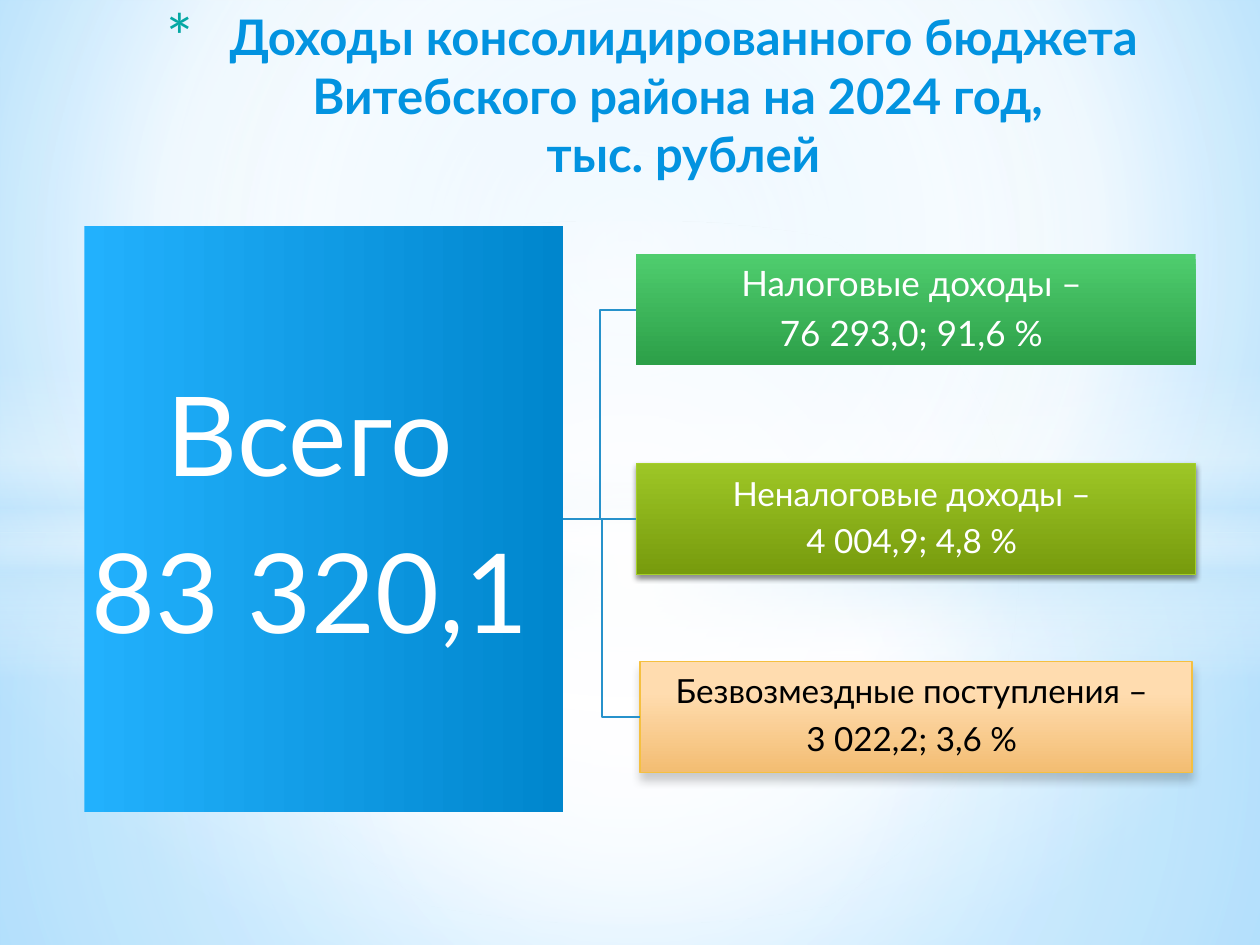
"""Build the slide on the consolidated budget revenue of the Vitebsk district."""
from dataclasses import dataclass

from lxml import etree
from pptx import Presentation
from pptx import util as u
from pptx.dml.color import RGBColor
from pptx.enum import shapes, text
from pptx.oxml import ns


@dataclass(frozen=True)
class Theme:
    font: str = "Lato"
    title: str = "0293E0"
    bullet: str = "04A8A4"
    light: str = "FFFFFF"
    dark: str = "000000"
    link: str = "2792CB"
    title_size: int = 28
    total_size: int = 63
    branch_size: int = 20
    small_size: int = 19


THEME = Theme()
WIDTH, HEIGHT = u.Inches(10), u.Inches(7.5)
TITLE = "Доходы консолидированного бюджета Витебского района на 2024 год, \vтыс. рублей"
TITLE_AREA = (5.1, 0, 91.3, 26.1)
CENTER = (50, 50, 50, 50)
BACKGROUND = dict(stops=[(0, "B0E0FF"), (60, "FFFFFF"), (100, "6BC5FF")], focus=(20, 10, 20, 60))
BACKDROP = [
    ("RECTANGLE", (0, 56.4, 100, 43.6),
     dict(stops=[(0, "FFFFFF", 91), (37, "FFFFFF", 76), (100, "C6E7FC", 79)], focus=CENTER)),
    ("RECTANGLE", (0, 0, 100, 56.4),
     dict(stops=[(0, "FFFFFF", 89), (48, "FFFFFF", 62), (100, "C6E7FC", 79)], focus=CENTER)),
    ("RECTANGLE", (0, 38.67, 100, 33.33),
     dict(stops=[(0, "FFFFFF", 0), (29, "FFFFFF", 30), (45, "C6E7FC", 40),
                 (55, "FFFFFF", 26), (65, "C6E7FC", 60), (100, "FFFFFF", 0)])),
    ("OVAL", (0, 23.33, 100, 74.4),
     dict(stops=[(0, "FFFFFF"), (54, "FFFFFF", 0)], focus=CENTER)),
]
TOTAL = dict(
    lines=["Всего ", "83 320,1 "], area=(6.7, 23.93, 38, 62),
    gradient=dict(stops=[(0, "22B1FD"), (100, "0086CD")], angle=0))
BRANCH_HEIGHT = 11.73
BRANCHES = [
    dict(lines=["Налоговые доходы – ", "76 293,0; 91,6 % "],
         place=(50.5, 26.93, 44.4), size=THEME.branch_size, color=THEME.light,
         stops=[(0, "4FCD6E"), (100, "2C9F48")], line=None, shadow=None),
    dict(lines=["Неналоговые доходы – ", "4 004,9; 4,8 % "],
         place=(50.5, 49.07, 44.4), size=THEME.small_size, color=THEME.light,
         stops=[(0, "9DC626"), (100, "779B0D")], line="A5D028", shadow=(45, 3.1, 1.8)),
    dict(lines=["Безвозмездные поступления – ", "3 022,2; 3,6 % "],
         place=(50.8, 70, 43.8), size=THEME.small_size, color=THEME.dark,
         stops=[(28, "FFDCAF"), (100, "F3BD72")], line="F5C040", shadow=(20, 5, 4)),
]


def locate(area):
    left, top, width, height = area
    return (int(WIDTH * left / 100), int(HEIGHT * top / 100),
            int(WIDTH * width / 100), int(HEIGHT * height / 100))


def add(parent, tag, **attributes):
    child = etree.SubElement(parent, ns.qn(tag))
    for name, value in attributes.items():
        child.set(name, str(value))
    return child


def add_color(parent, color, opacity=100):
    add(add(parent, "a:srgbClr", val=color), "a:alpha", val=opacity * 1000)


def paint(fill, holder, stops, angle=90, focus=None):
    fill.solid()
    solid = holder.find(ns.qn("a:solidFill"))
    gradient = etree.Element(ns.qn("a:gradFill"), rotWithShape="1")
    stop_list = add(gradient, "a:gsLst")
    for position, *color in stops:
        add_color(add(stop_list, "a:gs", pos=position * 1000), *color)
    if focus:
        sides = {side: share * 1000 for side, share in zip("ltrb", focus)}
        add(add(gradient, "a:path", path="circle"), "a:fillToRect", **sides)
    else:
        add(gradient, "a:lin", ang=angle * 60000, scaled=0)
    holder.replace(solid, gradient)


def add_box(page, kind, area, gradient, line=None, shadow=None):
    box = page.shapes.add_shape(getattr(shapes.MSO_SHAPE, kind), *locate(area))
    properties = box.element.spPr
    paint(box.fill, properties, **gradient)
    if line:
        box.line.color.rgb = RGBColor.from_string(line)
        box.line.width = u.Pt(0.75)
    else:
        box.line.fill.background()
    box.shadow.inherit = False
    if shadow:
        opacity, blur, distance = shadow
        outer = add(properties.find(ns.qn("a:effectLst")), "a:outerShdw",
                    blurRad=u.Pt(blur), dist=u.Pt(distance), dir=90 * 60000, rotWithShape=0)
        add_color(outer, THEME.dark, opacity)
    return box


def write(box, lines, size, color, bold=False, inset=0.01, spacing=0.9, after=0.35,
          anchor=text.MSO_ANCHOR.MIDDLE):
    frame = box.text_frame
    frame.word_wrap = True
    frame.auto_size = text.MSO_AUTO_SIZE.NONE
    frame.vertical_anchor = anchor
    frame.margin_left = frame.margin_right = u.Inches(inset)
    frame.margin_top = frame.margin_bottom = u.Inches(min(inset, 0.05))
    for index, line in enumerate(lines):
        para = frame.add_paragraph() if index else frame.paragraphs[0]
        para.text = line
        para.alignment = text.PP_ALIGN.CENTER
        para.line_spacing = spacing
        para.space_after = u.Pt(size * after)
        for span in para.runs:
            span.font.name = THEME.font
            span.font.size = u.Pt(size)
            span.font.bold = bold
            span.font.color.rgb = RGBColor.from_string(color)
    return frame


def add_title(page):
    title = page.shapes.title
    title.left, title.top, title.width, title.height = locate(TITLE_AREA)
    frame = write(title, [TITLE], THEME.title_size, THEME.title, bold=True, inset=0.1,
                  spacing=1.0, after=0, anchor=text.MSO_ANCHOR.TOP)
    properties = frame.paragraphs[0]._p.get_or_add_pPr()
    properties.set("marL", str(u.Inches(0.7)))
    properties.set("indent", str(u.Inches(-0.5)))
    add(add(properties, "a:buClr"), "a:srgbClr", val=THEME.bullet)
    add(properties, "a:buSzPct", val=128000)
    add(properties, "a:buFont", typeface=THEME.font)
    add(properties, "a:buChar", char="*")
    title.element.getparent().append(title.element)


def add_link(page, start, end):
    straight = abs(start[1] - end[1]) < u.Inches(0.05)
    kind = shapes.MSO_CONNECTOR.STRAIGHT if straight else shapes.MSO_CONNECTOR.ELBOW
    target = (end[0], start[1]) if straight else end
    link = page.shapes.add_connector(kind, *start, *target)
    link.line.color.rgb = RGBColor.from_string(THEME.link)
    link.line.width = u.Pt(1.25)
    add(link.element.spPr, "a:effectLst")


def main():
    deck = Presentation()
    deck.slide_width, deck.slide_height = WIDTH, HEIGHT
    page = deck.slides.add_slide(deck.slide_layouts[5])
    fill = page.background.fill
    paint(fill, page.element.find(".//" + ns.qn("p:bgPr")), **BACKGROUND)
    for kind, area, gradient in BACKDROP:
        add_box(page, kind, area, gradient)
    add_title(page)

    total = add_box(page, "RECTANGLE", TOTAL["area"], TOTAL["gradient"])
    write(total, TOTAL["lines"], THEME.total_size, THEME.light, inset=0.04)
    start = (total.left + total.width, total.top + total.height // 2)
    for branch in BRANCHES:
        box = add_box(page, "RECTANGLE", (*branch["place"], BRANCH_HEIGHT),
                      dict(stops=branch["stops"]), branch["line"], branch["shadow"])
        write(box, branch["lines"], branch["size"], branch["color"])
        add_link(page, start, (box.left, box.top + box.height // 2))
    deck.save("out.pptx")


if __name__ == "__main__":
    main()
